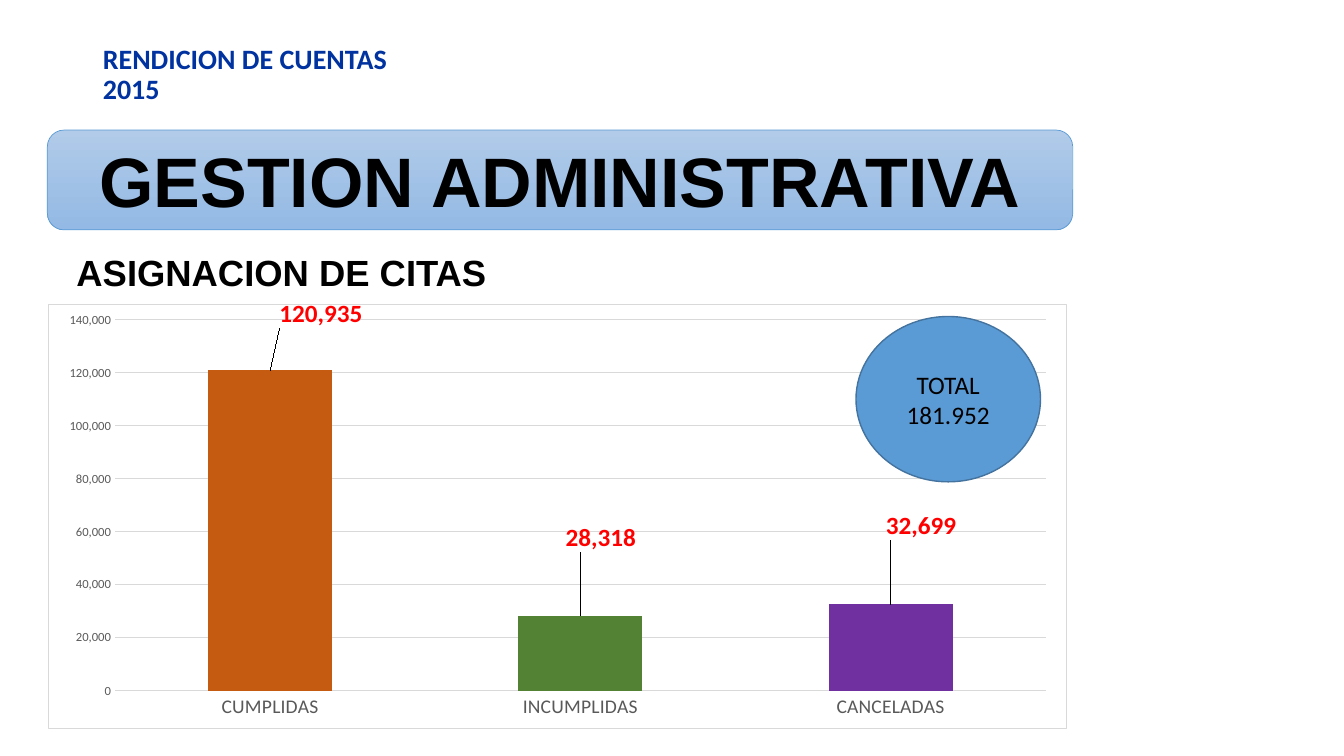
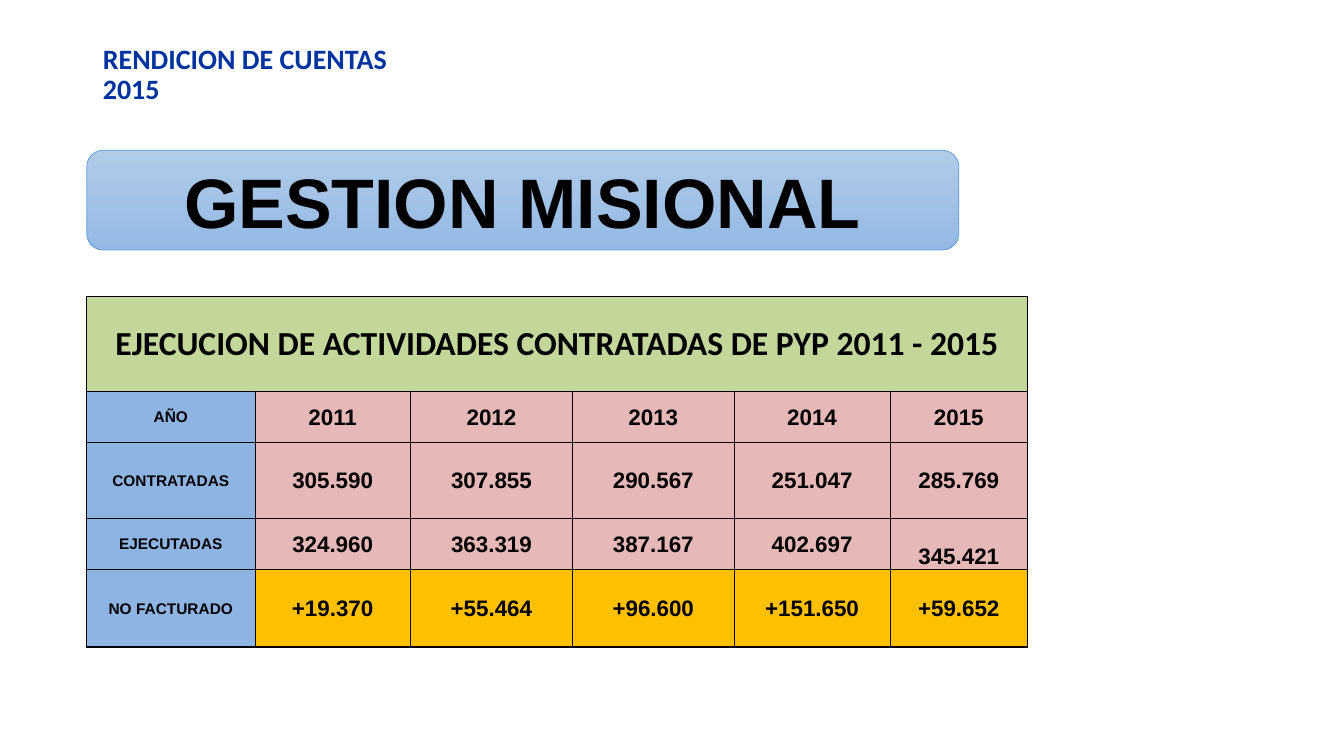
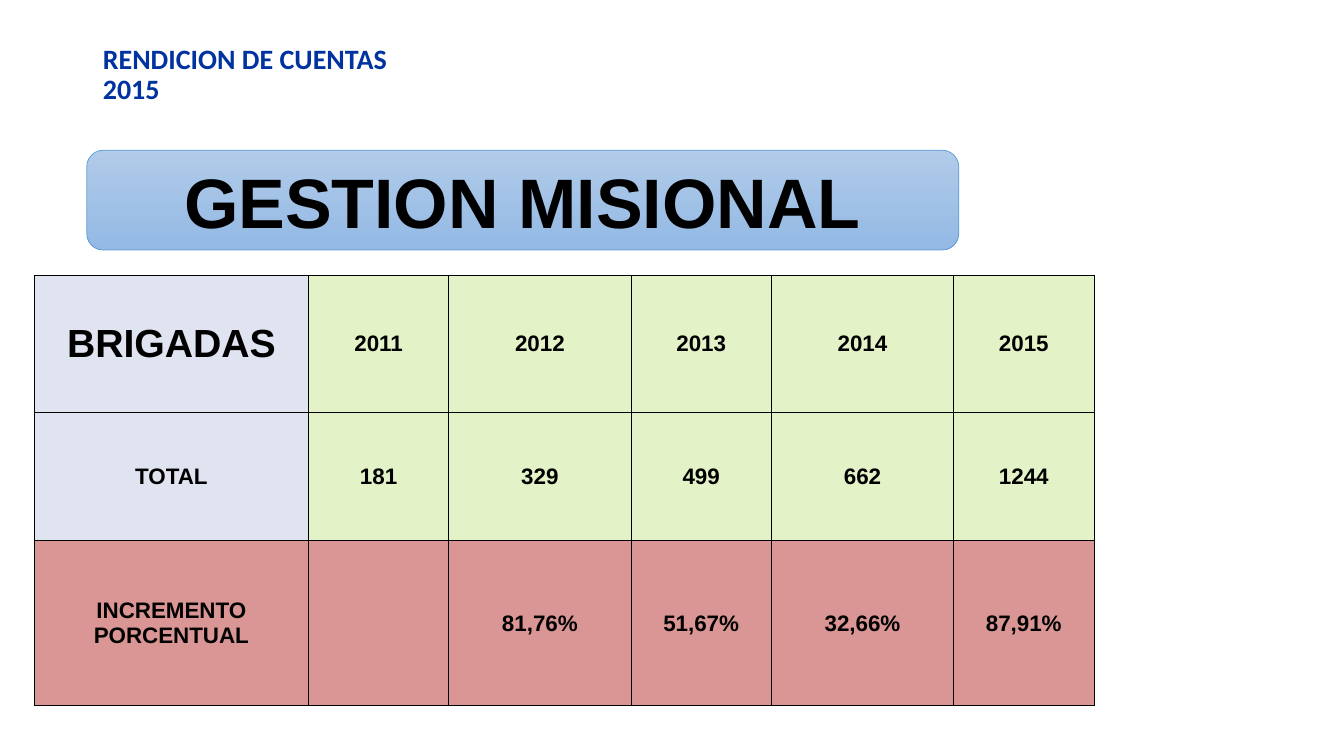
from lxml import etree
from pptx import Presentation
from pptx import util as u
from pptx.chart import data as chart_data
from pptx.dml.color import RGBColor
from pptx.enum import chart as ch, shapes, text
from pptx.oxml import parse_xml
from pptx.oxml.ns import nsdecls, qn

PX = 9144
COLORS = {
    "title": "0033A0", "black": "000000", "white": "FFFFFF", "label": "FF0000",
    "band_top": "B1CBE9", "band_bottom": "93B9E4", "blue": "5B9BD5", "circle_line": "43739E",
    "axis": "595959", "grid": "D9D9D9",
    "done": "C55A11", "missed": "548235", "cancelled": "7030A0",
    "heading": "C4D79B", "row_label": "8DB4E2", "pink": "E6B8B7", "gold": "FFC000",
    "lavender": "DFE4F0", "lime": "E3F2C7", "rose": "DA9694",
}


def px(*lengths):
    return [u.Emu(n * PX) for n in lengths]


def rgb(name):
    return RGBColor.from_string(COLORS[name])


def set_font(font, size, name="Arial", color="black", bold=True):
    font.size, font.name, font.bold = u.Pt(size), name, bold
    font.color.rgb = rgb(color)


def write(tf, lines, size, align=text.PP_ALIGN.CENTER, **style):
    tf.word_wrap = True
    tf.text = "\n".join(lines)
    for p in tf.paragraphs:
        p.alignment = align
        set_font(p.font, size, **style)


def add_box(s, kind, box, line, width):
    sp = s.shapes.add_shape(kind, *px(*box))
    sp.shadow.inherit = False
    sp.line.color.rgb = rgb(line)
    sp.line.width = u.Pt(width)
    sp.text_frame.vertical_anchor = text.MSO_ANCHOR.MIDDLE
    return sp


def add_section_slide(prs, section, box):
    s = prs.slides.add_slide(prs.slide_layouts[5])
    title = s.shapes.title
    title.left, title.top, title.width, title.height = px(92, 40, 324, 39)
    tf = title.text_frame
    tf.auto_size = text.MSO_AUTO_SIZE.NONE
    tf.vertical_anchor = text.MSO_ANCHOR.TOP
    write(tf, ["RENDICION DE CUENTAS 2015"], 20, text.PP_ALIGN.LEFT,
          name="Calibri", color="title")
    tf.paragraphs[0].line_spacing = 0.9

    band = add_box(s, shapes.MSO_SHAPE.ROUNDED_RECTANGLE, box, "blue", 0.5)
    band.fill.gradient()
    band.fill.gradient_angle = 270
    for stop, color in zip(band.fill.gradient_stops, ("band_top", "band_bottom")):
        stop.color.rgb = rgb(color)
    write(band.text_frame, [section], 50)
    return s


def chart_layout(inner=False, **parts):
    target = '<c:layoutTarget val="inner"/>' if inner else ""
    mode = '<c:xMode val="edge"/><c:yMode val="edge"/>' if inner else ""
    values = "".join(f'<c:{k} val="{v}"/>' for k, v in parts.items())
    return parse_xml(f'<c:layout {nsdecls("c")}><c:manualLayout>'
                     f'{target}{mode}{values}</c:manualLayout></c:layout>')


def style_axes(chart):
    for axis, size in ((chart.category_axis, 14), (chart.value_axis, 9)):
        axis.major_tick_mark = axis.minor_tick_mark = ch.XL_TICK_MARK.NONE
        axis.format.line.fill.background()
        set_font(axis.tick_labels.font, size, "Calibri", "axis", False)
    axis = chart.value_axis
    axis.minimum_scale, axis.maximum_scale, axis.major_unit = 0, 140000, 20000
    axis.tick_labels.number_format = "#,##0"
    axis.tick_labels.number_format_is_linked = False
    axis.major_gridlines.format.line.color.rgb = rgb("grid")
    axis.major_gridlines.format.line.width = u.Pt(0.75)


def add_appointments_chart(s, box, bars):
    data = chart_data.CategoryChartData(number_format="#,##0")
    data.categories = [bar[0] for bar in bars]
    data.add_series("Series 1", [bar[1] for bar in bars])
    chart = s.shapes.add_chart(ch.XL_CHART_TYPE.COLUMN_CLUSTERED, *px(*box), data).chart
    chart.has_legend = chart.has_title = False
    set_font(chart.font, 10, "Calibri", bold=False)
    style_axes(chart)

    plot = chart.plots[0]
    plot.gap_width = 150
    plot.vary_by_categories = False
    series = plot.series[0]
    labels = series.data_labels
    labels.show_value = True
    labels.number_format = "#,##0"
    labels.number_format_is_linked = False
    set_font(labels.font, 18, "Calibri", "label")
    for i, (_, _, color, _, _) in enumerate(bars):
        point = series.points[i]
        point.format.fill.solid()
        point.format.fill.fore_color.rgb = rgb(color)
        set_font(point.data_label.font, 18, "Calibri", "label")
        point.data_label.position = ch.XL_LABEL_POSITION.OUTSIDE_END

    root = chart.element if hasattr(chart, "element") else chart._chartSpace
    for label, bar in zip(root.iter(qn("c:dLbl")), bars):
        label.insert(1, chart_layout(x=bar[3], y=bar[4]))
    area = root.find(".//" + qn("c:plotArea"))
    for old in area.findall(qn("c:layout")):
        area.remove(old)
    area.insert(0, chart_layout(inner=True, x=0.065, y=0.037, w=0.915, h=0.875))
    root.find(qn("c:chart")).addnext(parse_xml(
        f'<c:spPr {nsdecls("c", "a")}>'
        f'<a:solidFill><a:srgbClr val="{COLORS["white"]}"/></a:solidFill>'
        f'<a:ln w="{u.Pt(0.75)}"><a:solidFill><a:srgbClr val="{COLORS["grid"]}"/>'
        '</a:solidFill></a:ln></c:spPr>'))


def add_total(s, box, lines):
    circle = add_box(s, shapes.MSO_SHAPE.OVAL, box, "circle_line", 1)
    circle.fill.solid()
    circle.fill.fore_color.rgb = rgb("blue")
    write(circle.text_frame, lines, 18, name="Calibri", bold=False)


def set_borders(cell, **widths):
    tc_pr = cell._tc.get_or_add_tcPr()
    for side in "LRTB":
        ln = etree.SubElement(tc_pr, qn(f"a:ln{side}"), w=str(u.Pt(widths[side])))
        fill = etree.SubElement(ln, qn("a:solidFill"))
        etree.SubElement(fill, qn("a:srgbClr"), val=COLORS["black"])


def add_grid(s, left, top, widths, rows, rim=0.5):
    heights = [row[0] for row in rows]
    table = s.shapes.add_table(len(rows), len(widths),
                               *px(left, top, sum(widths), sum(heights))).table
    table.first_row = table.horz_banding = False
    for column, width in zip(table.columns, px(*widths)):
        column.width = width
    last_row, last_col = len(rows) - 1, len(widths) - 1
    for r, (height, label_style, label_fill, value_fill, words) in enumerate(rows):
        table.rows[r].height = px(height)[0]
        for c in range(len(widths)):
            cell = table.cell(r, c)
            set_borders(cell, L=rim if c == 0 else 0.5,
                        R=rim if c == last_col else 0.5,
                        T=rim if r <= 1 else 0.5,
                        B=rim if r in (0, last_row) else 0.5)
            cell.fill.solid()
            cell.fill.fore_color.rgb = rgb(value_fill if c else label_fill)
            cell.margin_left = cell.margin_top = cell.margin_right = px(1)[0]
            cell.margin_bottom = 0
            cell.vertical_anchor = text.MSO_ANCHOR.MIDDLE
            if c < len(words) and words[c]:
                write(cell.text_frame, [words[c]], **({"size": 16} if c else label_style))
        if len(words) == 1:
            table.cell(r, 0).merge(table.cell(r, last_col))
    return table


def build_appointments(prs):
    s = add_section_slide(prs, "GESTION ADMINISTRATIVA", (47, 129, 1017, 99))
    add_appointments_chart(s, (48, 296, 1010, 427), [
        ("CUMPLIDAS", 120935, "done", 0.05, -0.09),
        ("INCUMPLIDAS", 28318, "missed", 0.02, -0.14),
        ("CANCELADAS", 32699, "cancelled", 0.03, -0.14),
    ])
    heading = s.shapes.add_textbox(*px(66, 243, 671, 54))
    write(heading.text_frame, ["ASIGNACION DE CITAS"], 26, text.PP_ALIGN.LEFT)
    add_total(s, (849, 314, 183, 164), ["TOTAL", "181.952"])


def build_activities(prs):
    s = add_section_slide(prs, "GESTION MISIONAL", (86, 149, 865, 99))
    head, label = {"size": 24, "name": "Calibri"}, {"size": 11}
    table = add_grid(s, 86, 294, (167, 154, 161, 160, 155, 136), [
        (94, head, "heading", "heading",
         ["EJECUCION DE ACTIVIDADES CONTRATADAS DE PYP 2011 - 2015"]),
        (51, label, "row_label", "pink", ["AÑO", "2011", "2012", "2013", "2014", "2015"]),
        (75, label, "row_label", "pink",
         ["CONTRATADAS", "305.590", "307.855", "290.567", "251.047", "285.769"]),
        (51, label, "row_label", "pink",
         ["EJECUTADAS", "324.960", "363.319", "387.167", "402.697", "345.421"]),
        (77, label, "row_label", "gold",
         ["NO FACTURADO", "+19.370", "+55.464", "+96.600", "+151.650", "+59.652"]),
    ], rim=1)
    table.cell(3, 5).vertical_anchor = text.MSO_ANCHOR.BOTTOM


def build_brigades(prs):
    s = add_section_slide(prs, "GESTION MISIONAL", (86, 149, 865, 99))
    add_grid(s, 34, 273, (272, 139, 181, 139, 181, 139), [
        (136, {"size": 28}, "lavender", "lime",
         ["BRIGADAS", "2011", "2012", "2013", "2014", "2015"]),
        (127, {"size": 16}, "lavender", "lime",
         ["TOTAL", "181", "329", "499", "662", "1244"]),
        (164, {"size": 16}, "rose", "rose",
         ["INCREMENTO PORCENTUAL", "", "81,76%", "51,67%", "32,66%", "87,91%"]),
    ])


def main():
    prs = Presentation()
    prs.slide_width, prs.slide_height = px(1333, 750)
    build_appointments(prs)
    build_activities(prs)
    build_brigades(prs)
    prs.save("out.pptx")


if __name__ == "__main__":
    main()
